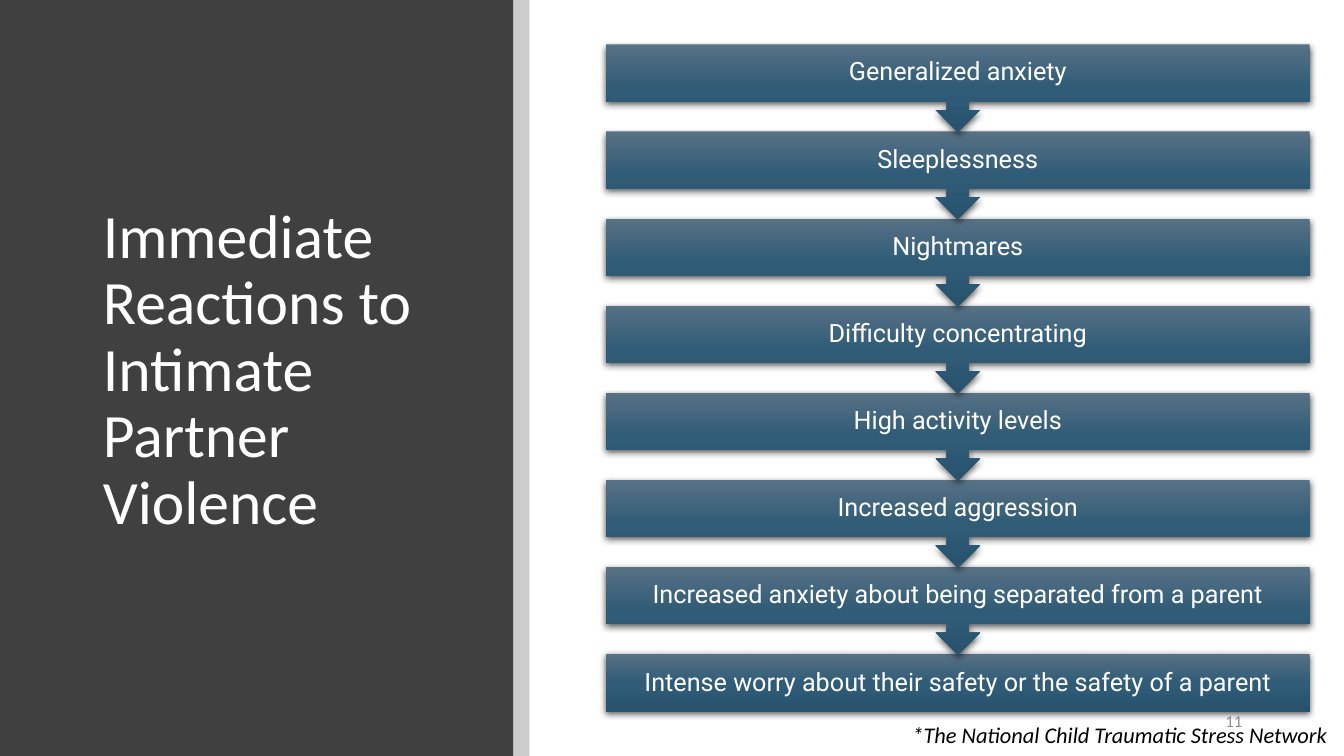
from copy import deepcopy
from dataclasses import dataclass
from typing import Any

from lxml import etree
from pptx import Presentation
from pptx import util as u
from pptx.dml.color import RGBColor
from pptx.enum import shapes, text
from pptx.oxml import ns


@dataclass(frozen=True)
class Theme:
    panel: str = "404040"
    stripe: str = "000000"
    stripe_alpha: int = 20
    shadow: str = "000000"
    shadow_alpha: int = 63
    gradient: tuple[str, str, str] = ("577185", "305C77", "28526D")
    light: str = "FFFFFF"
    dark: str = "000000"
    muted: str = "8C8C8C"
    heading_font: str = "Calibri"
    step_font: str = "Roboto"
    title_size: int = 44
    step_size: int = 18
    source_size: int = 16
    number_size: int = 12


@dataclass(frozen=True)
class Box:
    left: float
    top: float
    width: float
    height: float

    def place(self) -> tuple[u.Length, ...]:
        return tuple(map(u.Inches, (self.left, self.top, self.width, self.height)))


@dataclass(frozen=True)
class Step:
    words: str
    box: Box
    kind: shapes.MSO_SHAPE


THEME = Theme()
REACTIONS = (
    "Generalized anxiety",
    "Sleeplessness",
    "Nightmares",
    "Difficulty concentrating",
    "High activity levels",
    "Increased aggression",
    "Increased anxiety about being separated from a parent",
    "Intense worry about their safety or the safety of a parent",
)
FIRST_TOP, LAST_TOP = 0.44, 6.49
PITCH = (LAST_TOP - FIRST_TOP) / (len(REACTIONS) - 1)
BAR_HEIGHT = 0.57


def apply(target: Any, values: dict[str, Any]) -> None:
    for name, value in values.items():
        setattr(target, name, value)


def write(shape: Any, words: str, font: str, size: int, color: str,
          frame: dict[str, Any], paragraph: dict[str, Any], italic: bool = False) -> None:
    apply(shape.text_frame, {"word_wrap": True, "auto_size": text.MSO_AUTO_SIZE.NONE, **frame})
    line = shape.text_frame.paragraphs[0]
    apply(line, paragraph)
    run = line.add_run()
    run.text = words
    apply(run.font, {"name": font, "size": u.Pt(size), "italic": italic})
    run.font.color.rgb = RGBColor.from_string(color)


def add_plain_shape(slide: Any, kind: shapes.MSO_SHAPE, box: Box) -> Any:
    shape = slide.shapes.add_shape(kind, *box.place())
    shape.shadow.inherit = False
    shape.line.fill.background()
    return shape


def add_band(slide: Any, box: Box, color: str) -> Any:
    band = add_plain_shape(slide, shapes.MSO_SHAPE.RECTANGLE, box)
    band.fill.solid()
    band.fill.fore_color.rgb = RGBColor.from_string(color)
    return band


def set_alpha(color_element: Any, percent: int) -> None:
    etree.SubElement(color_element, ns.qn("a:alpha"), val=str(percent * 1000))


def fill_gradient(shape: Any, colors: tuple[str, str, str]) -> None:
    shape.fill.gradient()
    shape.fill.gradient_angle = 270
    stop_list = shape._element.spPr.find(".//" + ns.qn("a:gsLst"))
    stop_list.insert(1, deepcopy(stop_list[0]))
    for index, (stop, color) in enumerate(zip(shape.fill.gradient_stops, colors)):
        stop.position = index / (len(colors) - 1)
        stop.color.rgb = RGBColor.from_string(color)


def cast_shadow(shape: Any) -> None:
    effects = shape._element.spPr.find(ns.qn("a:effectLst"))
    shadow = etree.SubElement(
        effects, ns.qn("a:outerShdw"), blurRad=str(u.Pt(4.5)), dist=str(u.Pt(1.5)),
        dir="5400000", algn="ctr", rotWithShape="0")
    set_alpha(etree.SubElement(shadow, ns.qn("a:srgbClr"), val=THEME.shadow), THEME.shadow_alpha)


def add_step(slide: Any, step: Step) -> None:
    bar = add_plain_shape(slide, step.kind, step.box)
    fill_gradient(bar, THEME.gradient)
    cast_shadow(bar)
    inset = u.Inches(0.14)
    frame = {"vertical_anchor": text.MSO_ANCHOR.MIDDLE}
    frame |= {f"margin_{side}": inset for side in ("left", "top", "right", "bottom")}
    write(bar, step.words, THEME.step_font, THEME.step_size, THEME.light, frame,
          {"alignment": text.PP_ALIGN.CENTER, "line_spacing": 0.9})


def reaction_steps() -> list[Step]:
    steps = []
    for index, words in enumerate(REACTIONS):
        is_last = index == len(REACTIONS) - 1
        kind = shapes.MSO_SHAPE.RECTANGLE if is_last else shapes.MSO_SHAPE.DOWN_ARROW_CALLOUT
        height = BAR_HEIGHT if is_last else 0.87
        steps.append(Step(words, Box(6.01, FIRST_TOP + index * PITCH, 6.98, height), kind))
    return steps


def add_title(slide: Any) -> None:
    title = slide.shapes.title
    places = Box(0.92, 1.39, 3.65, 5.91).place()
    apply(title, dict(zip(("left", "top", "width", "height"), places)))
    write(title, "Immediate Reactions to Intimate Partner Violence",
          THEME.heading_font, THEME.title_size, THEME.light,
          {"vertical_anchor": text.MSO_ANCHOR.MIDDLE, "margin_bottom": u.Inches(1.37)},
          {"alignment": text.PP_ALIGN.LEFT, "line_spacing": 0.9})


def main() -> None:
    deck = Presentation()
    apply(deck, {"slide_width": u.Inches(13.33), "slide_height": u.Inches(7.5)})
    slide = deck.slides.add_slide(deck.slide_layouts[5])

    panel = add_band(slide, Box(0, 0, 5.09, 7.5), THEME.panel)
    slide.shapes.title._element.addprevious(panel._element)
    add_title(slide)
    stripe = add_band(slide, Box(5.09, 0, 0.16, 7.5), THEME.stripe)
    set_alpha(stripe._element.spPr.find(ns.qn("a:solidFill"))[0], THEME.stripe_alpha)

    for step in reversed(reaction_steps()):
        add_step(slide, step)

    source = slide.shapes.add_textbox(*Box(8.6, 7.11, 4.74, 0.37).place())
    write(source, "*The National Child Traumatic Stress Network",
          THEME.heading_font, THEME.source_size, THEME.dark,
          {"margin_left": u.Inches(0.45), "margin_right": 0},
          {"alignment": text.PP_ALIGN.LEFT}, italic=True)
    page_number = slide.shapes.add_textbox(*Box(9.42, 6.95, 3, 0.4).place())
    write(page_number, "11", THEME.heading_font, THEME.number_size, THEME.muted,
          {"vertical_anchor": text.MSO_ANCHOR.MIDDLE}, {"alignment": text.PP_ALIGN.RIGHT})

    deck.save("out.pptx")


if __name__ == "__main__":
    main()
